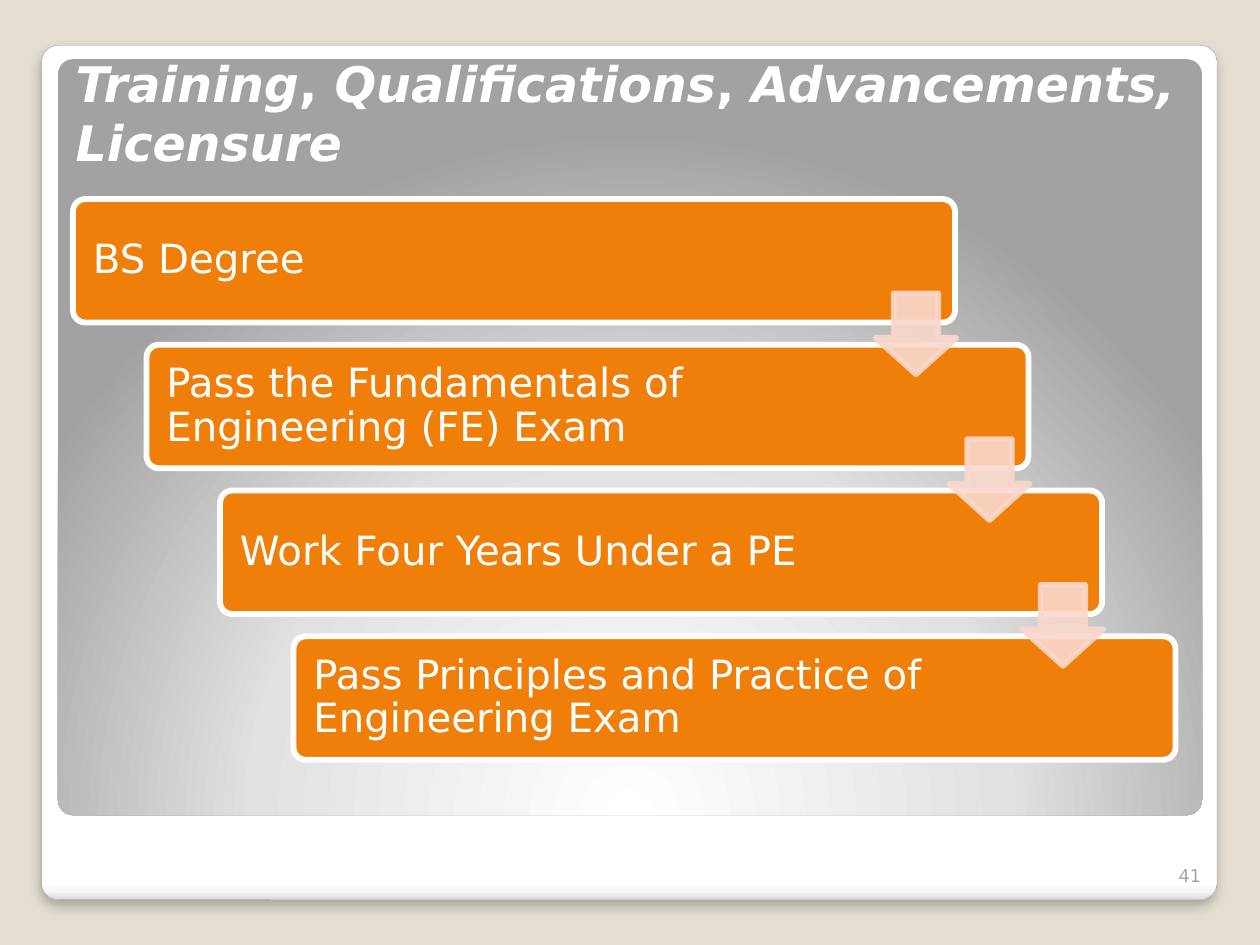
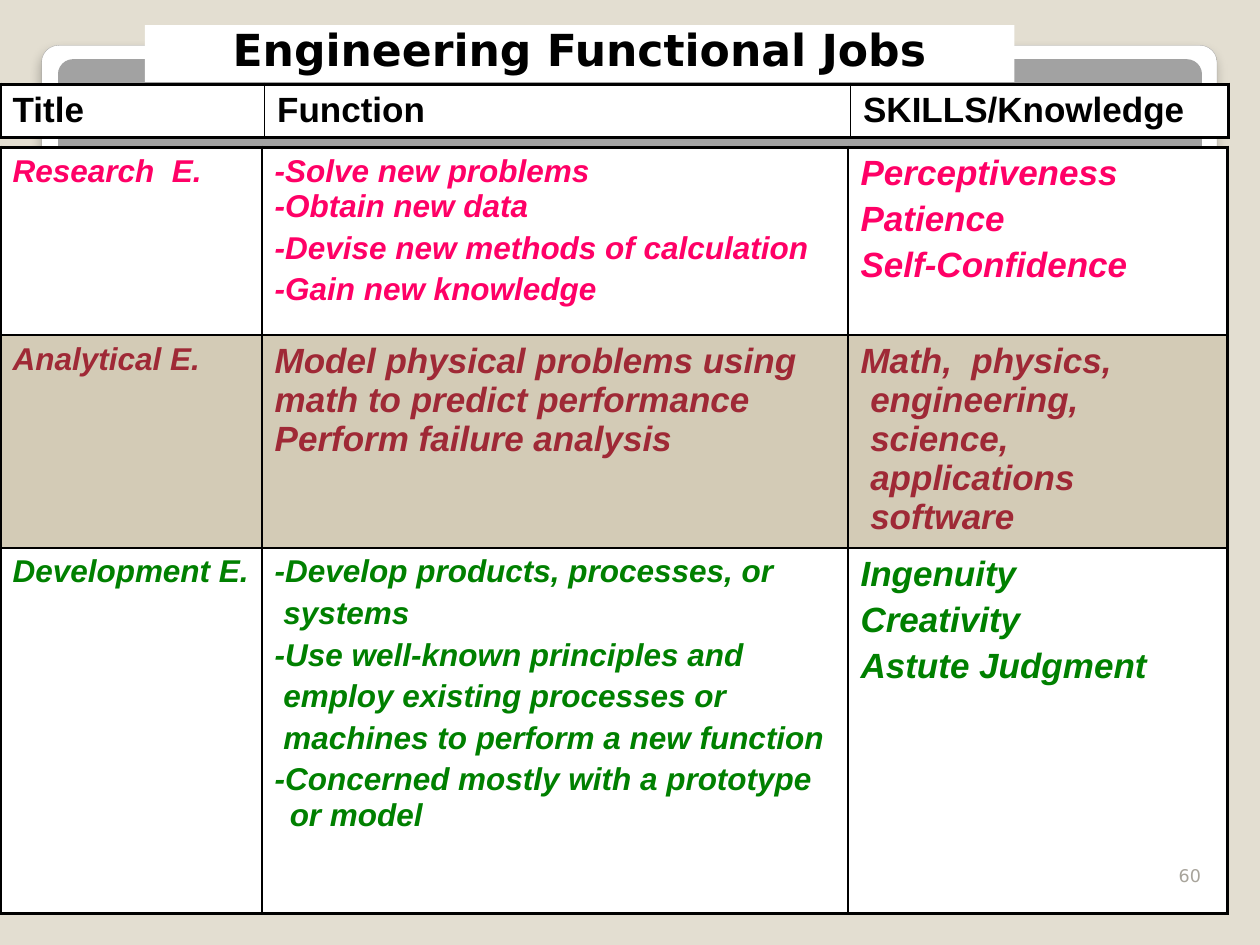
from dataclasses import dataclass

from lxml import etree
from pptx import Presentation
from pptx.dml.color import RGBColor as Rgb
from pptx.enum.shapes import MSO_SHAPE as Kind
from pptx.enum.text import MSO_ANCHOR as Anchor, MSO_AUTO_SIZE as Auto, PP_ALIGN as Align
from pptx.oxml import parse_xml
from pptx.oxml.ns import nsdecls, qn
from pptx.util import Inches, Pt


@dataclass(frozen=True)
class Theme:
    sans: str = "DejaVu Sans"
    arial: str = "Arial"
    sand: str = "E3DED1"
    white: str = "FFFFFF"
    black: str = "000000"
    rim: str = "A4A4A4"
    orange: str = "F07F09"
    blush: str = "F9D8CC"
    tan: str = "D3CBB6"
    pink: str = "FF0066"
    red: str = "9F2936"
    green: str = "008000"
    grey: str = "A8A49B"
    head: float = 28
    title: float = 25.2
    card: float = 23
    large: float = 20
    cell: float = 18
    note: float = 10
    thick: float = 2.25
    thin: float = 1
    edge: float = 3.35


T = Theme()
PAGE = ((0, "FFFFFF"), (98, "FFFFFF"), (99, "F7F7F7"), (100, "DADADA"))
GLOW = ((0, "FFFFFF"), (55, "E1E1E1"), (100, "A2A2A2"))
DOWN = '<a:lin ang="5400000" scaled="0"/>'
ROUND = ('<a:path path="circle"><a:fillToRect l="50000" t="175000" '
         'r="50000" b="-75000"/></a:path>')
SHADE = ('<a:outerShdw {} blurRad="76200" dist="50800" dir="5400000" algn="t" rotWithShape="0">'
         '<a:srgbClr val="000000"><a:alpha val="25000"/></a:srgbClr></a:outerShdw>')


def setall(item, values):
    for name, value in values.items():
        setattr(item, name, value)


def place(shape, box):
    names = ("left", "top", "width", "height")
    setall(shape, dict(zip(names, map(Inches, box))))


def write(frame, paras, look, para=None, **body):
    """Fill a frame; a paragraph is a string or a list of (text, font values)."""
    setall(frame, dict(word_wrap=True, auto_size=Auto.NONE) | body)
    look = dict(look)
    color = Rgb.from_string(look.pop("color"))
    for i, text in enumerate(paras):
        p = frame.paragraphs[0] if i == 0 else frame.add_paragraph()
        setall(p, para or {})
        extra = []
        if isinstance(text, str):
            p.text = text
        else:
            for part, more in text:
                p.add_run().text = part
                extra.append(more)
        for j, run in enumerate(p.runs):
            setall(run.font, look | (extra[j] if extra else {}))
            run.font.color.rgb = color


def blend(shape, stops, path):
    """Give a shape without a fill a gradient."""
    marks = "".join(f'<a:gs pos="{at * 1000}"><a:srgbClr val="{c}"/></a:gs>' for at, c in stops)
    xml = f'<a:gradFill {nsdecls("a")} rotWithShape="1"><a:gsLst>{marks}</a:gsLst>{path}</a:gradFill>'
    shape.element.spPr.insert(2, parse_xml(xml))


def fade(shape, alpha):
    for color in shape.element.spPr.iter(qn("a:srgbClr")):
        etree.SubElement(color, qn("a:alpha")).set("val", str(alpha * 1000))


def border(cell, sides):
    """Draw the borders of a cell, given as side letter and width in points."""
    props = cell._tc.get_or_add_tcPr()
    for side, width in sides.items():
        props.append(parse_xml(
            f'<a:ln{side} {nsdecls("a")} w="{Pt(width)}"><a:solidFill>'
            f'<a:srgbClr val="{T.black}"/></a:solidFill></a:ln{side}>'))


class Deck:
    def __init__(self):
        self.prs = Presentation()
        setall(self.prs, dict(slide_width=Inches(10), slide_height=Inches(7.5)))
        self.base = self.prs.slide_layouts[5]
        self.slide = None

    def start(self):
        self.slide = self.prs.slides.add_slide(self.base)

    def frame(self):
        """Move the two framing panels to the layout that all slides share."""
        fill = self.base.background.fill
        fill.solid()
        fill.fore_color.rgb = Rgb.from_string(T.sand)
        sheet = self.shape(Kind.ROUNDED_RECTANGLE, (0.33, 0.36, 9.33, 6.78), (0.02,),
                           line=T.rim, width=0.16)
        blend(sheet, PAGE, DOWN)
        sheet.element.spPr.find(qn("a:effectLst")).append(parse_xml(SHADE.format(nsdecls("a"))))
        panel = self.shape(Kind.ROUNDED_RECTANGLE, (0.46, 0.47, 9.08, 6), (0.02,))
        blend(panel, GLOW, ROUND)
        first = self.base.placeholders[0].element
        for item in (sheet, panel):
            first.addprevious(item.element)

    def shape(self, kind, box, adjust=(), fill=None, line=None, width=T.edge):
        item = self.slide.shapes.add_shape(kind, *map(Inches, box))
        item.shadow.inherit = False
        for i, value in enumerate(adjust):
            item.adjustments[i] = value
        if fill:
            item.fill.solid()
            item.fill.fore_color.rgb = Rgb.from_string(fill)
        if line:
            item.line.color.rgb = Rgb.from_string(line)
            item.line.width = Pt(width)
        else:
            item.line.fill.background()
        return item

    def title(self, text, box, size, color, align, fill=None):
        item = self.slide.shapes.title
        place(item, box)
        if fill:
            item.fill.solid()
            item.fill.fore_color.rgb = Rgb.from_string(fill)
        look = dict(name=T.sans, size=Pt(size), bold=True, color=color)
        write(item.text_frame, [text], look, dict(alignment=align),
              vertical_anchor=Anchor.BOTTOM)

    def number(self, value):
        item = self.slide.shapes.add_textbox(*map(Inches, (9.13, 6.68, 0.5, 0.4)))
        write(item.text_frame, [str(value)], dict(name=T.sans, size=Pt(T.note), color=T.grey),
              dict(alignment=Align.RIGHT), vertical_anchor=Anchor.BOTTOM)

    def card(self, text, left, top):
        item = self.shape(Kind.ROUNDED_RECTANGLE, (left, top, 7, 0.98), (0.1,), T.orange, T.white)
        write(item.text_frame, [text], dict(name=T.sans, size=Pt(T.card), color=T.white),
              dict(alignment=Align.LEFT, line_spacing=0.9), vertical_anchor=Anchor.MIDDLE,
              margin_left=Inches(0.13), margin_right=Inches(1.35))

    def arrow(self, left, top):
        item = self.shape(Kind.DOWN_ARROW, (left, top, 0.64, 0.64), (0.55, 0.45), T.blush, T.blush)
        fade(item, 90)

    def table(self, top, cols, heights, rows):
        """Rows hold (fill, color, italic, cells); a cell is (size, paragraphs)."""
        box = (0, top, sum(cols), sum(heights))
        grid = self.slide.shapes.add_table(len(rows), len(cols), *map(Inches, box)).table
        setall(grid, dict(first_row=False, horz_banding=False))
        for col, width in zip(grid.columns, cols):
            col.width = Inches(width)
        for i, (fill, color, italic, cells) in enumerate(rows):
            grid.rows[i].height = Inches(heights[i])
            for j, (size, paras) in enumerate(cells):
                cell = grid.cell(i, j)
                outer = dict(L=j == 0, R=j == len(cols) - 1, T=i == 0, B=i == len(rows) - 1)
                border(cell, {s: T.thick if out else T.thin for s, out in outer.items()})
                cell.fill.solid()
                cell.fill.fore_color.rgb = Rgb.from_string(fill)
                look = dict(name=T.arial, size=Pt(size), bold=True, italic=italic, color=color)
                write(cell.text_frame, paras, look, dict(space_before=Pt(0.2 * size)))
        return grid


def hang(cell, indent):
    for p in cell.text_frame.paragraphs:
        props = p._p.get_or_add_pPr()
        props.set("marL", str(Inches(indent)))
        props.set("indent", str(-Inches(indent)))


STEPS = ("BS Degree", "Pass the Fundamentals of Engineering (FE) Exam",
         "Work Four Years Under a PE", "Pass Principles and Practice of Engineering Exam")

HEADS = [(T.white, T.black, False,
          [(T.large, [text]) for text in ("Title", "Function", "SKILLS/Knowledge")])]

JOBS = [
    (T.white, T.pink, True, [
        (T.cell, ["Research  E."]),
        (T.cell, ["-Solve new problems\n-Obtain new data",
                  "-Devise new methods of calculation", "-Gain new knowledge"]),
        (T.large, ["Perceptiveness", "Patience", "Self-Confidence"])]),
    (T.tan, T.red, True, [
        (T.cell, ["Analytical E."]),
        (T.large, ["Model physical problems using math to predict performance "
                   "Perform failure analysis"]),
        (T.large, ["Math,  physics,\n engineering,\n science,\n applications\n software"])]),
    (T.white, T.green, True, [
        (T.cell, ["Development E."]),
        (T.cell, ["-Develop products, processes, or", " systems",
                  "-Use well-known principles and", " employ existing processes or",
                  " machines to perform a new function",
                  "-Concerned mostly with a prototype or model"]),
        (T.large, ["Ingenuity", "Creativity", "Astute Judgment"])]),
]


def path_slide(deck):
    words = ("Training", ", ", "Qualifications", ", ", "Advancements, Licensure")
    deck.title([(word, dict(italic=word != ", ")) for word in words],
               (0.5, 0.33, 9.33, 1.08), T.head, T.white, Align.LEFT)
    deck.number(41)
    spots = [(0.58 + i * 1.75 / 3, 1.58 + i * 3.47 / 3) for i in range(len(STEPS))]
    for text, spot in zip(STEPS, spots):
        deck.card(text, *spot)
    for left, top in spots[:-1]:
        deck.arrow(left + 6.37, top + 0.75)


def jobs_slide(deck):
    deck.title("Engineering Functional Jobs", (1.15, 0.2, 6.9, 0.45),
               T.title, T.black, Align.CENTER, T.white)
    grid = deck.table(1.17, (2.08, 4.65, 3.01), (1.49, 1.69, 2.9), JOBS)
    hang(grid.cell(2, 1), 0.12)
    deck.table(0.67, (2.1, 4.65, 3), (0.42,), HEADS)
    deck.number(60)


def main():
    deck = Deck()
    deck.start()
    deck.frame()
    path_slide(deck)
    deck.start()
    jobs_slide(deck)
    deck.prs.save("out.pptx")


if __name__ == "__main__":
    main()
